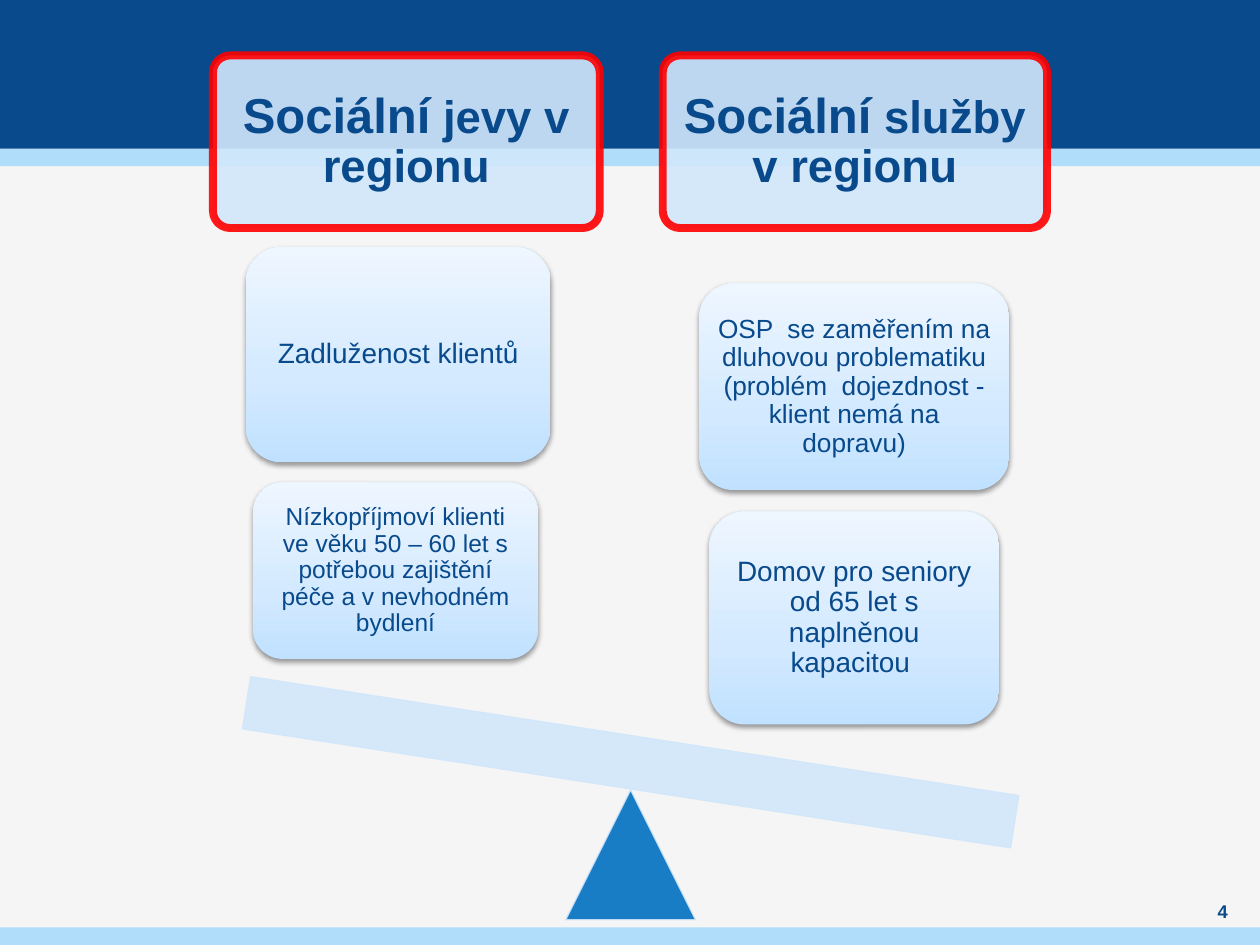
from dataclasses import dataclass

from lxml.etree import SubElement
from pptx import Presentation
from pptx.dml.color import RGBColor
from pptx.enum.shapes import MSO_SHAPE
from pptx.enum.text import MSO_ANCHOR, PP_ALIGN
from pptx.oxml.ns import qn
from pptx.util import Inches, Pt

COLORS = {
    "navy": "084A8B", "sky": "AFDDFA", "paper": "F5F5F5", "pale": "D2E7FB",
    "blue": "0070C0", "red": "FF0000", "black": "000000",
}
STOPS = [(0, "C0E1FF"), (35, "D2E9FF"), (100, "EEF6FF")]
Box = tuple[float, float, float, float]


@dataclass
class Run:
    text: str
    size: float
    bold: bool = False


@dataclass
class Card:
    box: Box
    runs: list[Run]
    inset: float


BANDS = [
    ((0, 1.18, 10, 0.14), "sky"),
    ((0, 0, 10, 1.18), "navy"),
    ((0, 7.36, 10, 0.14), "sky"),
]
HEADS = [
    Card((1.69, 0.44, 3.07, 1.37),
         [Run("Sociální", 28, True), Run(" jevy v regionu", 26, True)], 0.12),
    Card((5.26, 0.44, 3.05, 1.37),
         [Run("Sociální", 28, True), Run(" služby v regionu", 26, True)], 0.12),
]
CARDS = [
    Card((5.63, 4.06, 2.3, 1.69),
         [Run("Domov pro seniory od 65 let s naplněnou kapacitou ", 16)], 0.07),
    Card((5.55, 2.25, 2.46, 1.64),
         [Run("OSP  se zaměřením na dluhovou problematiku "
              "(problém  dojezdnost - klient nemá na dopravu)", 15)], 0.06),
    Card((2.01, 3.83, 2.26, 1.4),
         [Run("Nízkopříjmoví klienti ve věku 50 – 60 let s potřebou "
              "zajištění péče a v nevhodném bydlení", 14)], 0.06),
    Card((1.95, 1.96, 2.42, 1.71), [Run("Zadluženost klientů", 16)], 0.07),
]


def rgb(name: str) -> RGBColor:
    return RGBColor.from_string(COLORS[name])


def place(box: Box) -> list:
    return [Inches(v) for v in box]


def fade(shape, alpha: int) -> None:
    """Give every solid colour of the fill and line the same opacity."""
    for tag in shape.element.spPr.iter(qn("a:srgbClr")):
        SubElement(tag, qn("a:alpha"), val=str(alpha * 1000))


def draw(slide, kind, box: Box, fill: str, line: str = "", width: float = 0.75):
    shape = slide.shapes.add_shape(kind, *place(box))
    shape.shadow.inherit = False
    shape.fill.solid()
    shape.fill.fore_color.rgb = rgb(fill)
    if line:
        shape.line.color.rgb = rgb(line)
        shape.line.width = Pt(width)
        fade(shape, 90)
    else:
        shape.line.fill.background()
    return shape


def shade(shape) -> None:
    """Fill with the upward gradient and add a soft shadow below."""
    shape.fill.gradient()
    grad = shape.element.spPr.find(qn("a:gradFill"))
    grad.find(qn("a:lin")).set("ang", str(270 * 60000))
    stops = grad.find(qn("a:gsLst"))
    for old in list(stops):
        stops.remove(old)
    for pos, tint in STOPS:
        stop = SubElement(stops, qn("a:gs"), pos=str(pos * 1000))
        SubElement(stop, qn("a:srgbClr"), val=tint)
    glow = SubElement(shape.element.spPr.find(qn("a:effectLst")), qn("a:outerShdw"),
                      blurRad=str(Pt(3.1)), dist=str(Pt(1.6)),
                      dir=str(90 * 60000), rotWithShape="0")
    tone = SubElement(glow, qn("a:srgbClr"), val=COLORS["black"])
    SubElement(tone, qn("a:alpha"), val="38000")


def write(shape, runs: list[Run], inset: float, space: float = 0.9) -> None:
    frame = shape.text_frame
    pad = Inches(inset)
    look = {
        "word_wrap": True, "vertical_anchor": MSO_ANCHOR.MIDDLE,
        "margin_left": pad, "margin_right": pad,
        "margin_top": pad, "margin_bottom": pad,
    }
    for key, value in look.items():
        setattr(frame, key, value)
    para = frame.paragraphs[0]
    para.alignment = PP_ALIGN.CENTER
    para.line_spacing = space
    for item in runs:
        run = para.add_run()
        run.text = item.text
        style = {"name": "Arial", "size": Pt(item.size), "bold": item.bold}
        for key, value in style.items():
            setattr(run.font, key, value)
        run.font.color.rgb = rgb("navy")


def main() -> None:
    deck = Presentation()
    deck.slide_width, deck.slide_height = Inches(10), Inches(7.5)
    slide = deck.slides.add_slide(deck.slide_layouts[6])
    slide.background.fill.solid()
    slide.background.fill.fore_color.rgb = rgb("paper")

    # Page bands
    for box, fill in BANDS:
        draw(slide, MSO_SHAPE.RECTANGLE, box, fill)

    # Column heads
    for head in HEADS:
        shape = draw(slide, MSO_SHAPE.ROUNDED_RECTANGLE, head.box, "pale", "red", 4.5)
        shape.adjustments[0] = 0.1
        write(shape, head.runs, head.inset)

    # Scale: pivot and tilted beam
    draw(slide, MSO_SHAPE.ISOSCELES_TRIANGLE, (4.49, 6.27, 1.03, 1.03), "blue", "pale")
    beam = draw(slide, MSO_SHAPE.RECTANGLE, (1.92, 5.84, 6.17, 0.42), "pale", "pale")
    beam.rotation = 8.8

    # Weights on the scale
    for card in CARDS:
        shape = draw(slide, MSO_SHAPE.ROUNDED_RECTANGLE, card.box, "pale")
        shade(shape)
        write(shape, card.runs, card.inset)

    # Page number
    note = slide.shapes.add_textbox(*place((9.45, 7.13, 0.51, 0.2)))
    write(note, [Run("4", 10.5, True)], 0, 1.0)

    deck.save("out.pptx")


if __name__ == "__main__":
    main()
